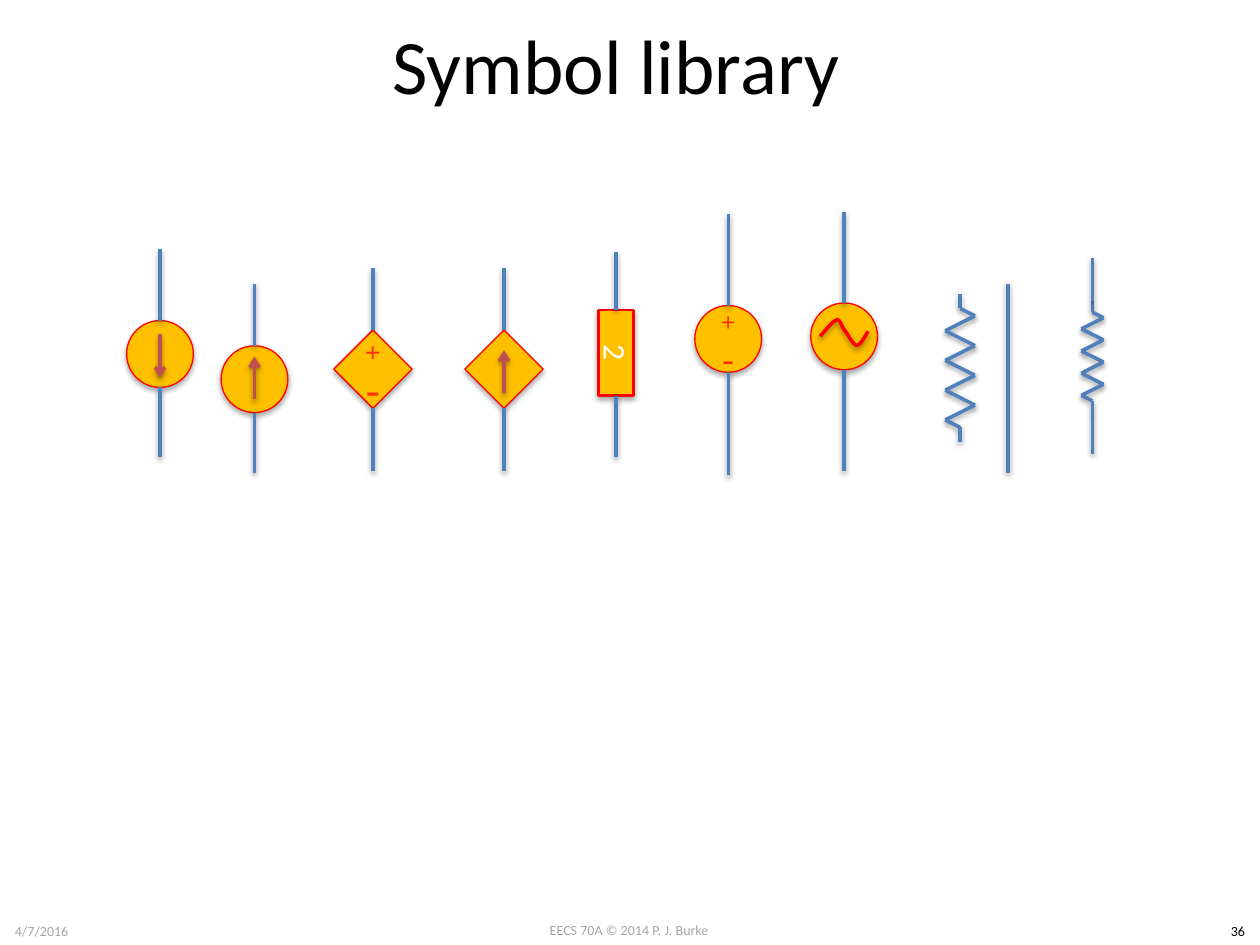
from dataclasses import dataclass
from itertools import pairwise
from math import sqrt

from lxml.etree import SubElement
from pptx import Presentation
from pptx.dml.color import RGBColor
from pptx.enum.shapes import MSO_CONNECTOR, MSO_SHAPE
from pptx.enum.text import MSO_ANCHOR, PP_ALIGN
from pptx.oxml.ns import qn
from pptx.util import Inches, Pt

COLUMNS, ROWS = 10, 7.5


@dataclass(frozen=True)
class Theme:
    font: str = "Calibri"
    sign_font: str = "Times New Roman"
    ink: str = "000000"
    muted: str = "A6A6A6"
    light: str = "FFFFFF"
    body: str = "FFC000"
    outline: str = "FF0000"
    wire: str = "4F81BD"
    arrow: str = "C0504D"
    sign: str = "FF3300"
    title_size: float = 44
    label_size: float = 18
    footer_size: float = 8
    wire_width: float = 2
    diameter: float = 0.53
    square: float = 0.44


class SymbolSheet:
    """Draws circuit symbols; lengths are grid columns and rows."""

    def __init__(self, presentation, theme):
        self.theme = theme
        self.column = presentation.slide_width / COLUMNS
        self.row = presentation.slide_height / ROWS
        self.slide = presentation.slides.add_slide(presentation.slide_layouts[5])
        self.canvas = self.slide.shapes

    def begin_symbol(self):
        self.canvas = self.slide.shapes.add_group_shape().shapes

    def end_symbol(self):
        self.canvas = self.slide.shapes

    def point(self, x, y):
        return round(x * self.column), round(y * self.row)

    def box(self, x, y, width, height):
        return *self.point(x, y), *self.point(width, height)

    def set_text(self, shape, text, size, color, align=PP_ALIGN.CENTER, font=None, bold=False):
        frame = shape.text_frame
        frame.vertical_anchor = MSO_ANCHOR.MIDDLE
        paragraph = frame.paragraphs[0]
        paragraph.text = text
        paragraph.alignment = align
        paragraph.font.name = font or self.theme.font
        paragraph.font.size = Pt(size)
        paragraph.font.bold = bold
        paragraph.font.color.rgb = RGBColor.from_string(color)

    def title(self, text, *area):
        shape = self.slide.shapes.title
        shape.left, shape.top, shape.width, shape.height = self.box(*area)
        self.set_text(shape, text, self.theme.title_size, self.theme.ink)

    def text(self, text, area, size, color, inset=0.0, **style):
        shape = self.canvas.add_textbox(*self.box(*area))
        frame = shape.text_frame
        frame.word_wrap = True
        frame.margin_left = frame.margin_right = self.point(inset, 0)[0]
        frame.margin_top = frame.margin_bottom = 0
        self.set_text(shape, text, size, color, **style)

    def stroke(self, shape, color, width, distance=20000, opacity=38000):
        """Set the line, then the soft shadow below it."""
        shape.line.color.rgb = RGBColor.from_string(color)
        shape.line.width = Pt(width)
        effects = SubElement(shape._element.spPr, qn("a:effectLst"))
        shadow = SubElement(effects, qn("a:outerShdw"), blurRad="40000",
                            dist=str(distance), dir="5400000", rotWithShape="0")
        black = SubElement(shadow, qn("a:srgbClr"), val="000000")
        SubElement(black, qn("a:alpha"), val=str(opacity))

    def line(self, start, end, color=None):
        connector = self.canvas.add_connector(
            MSO_CONNECTOR.STRAIGHT, *self.point(*start), *self.point(*end))
        self.stroke(connector, color or self.theme.wire, self.theme.wire_width)
        return connector

    def arrow(self, x, start, end):
        connector = self.line((x, start), (x, end), self.theme.arrow)
        SubElement(connector._element.spPr.find(qn("a:ln")), qn("a:tailEnd"), type="arrow")

    def body(self, kind, x, y, width, height, rotation=0, line_width=0.75):
        """Place a filled shape by its centre."""
        shape = self.canvas.add_shape(
            kind, *self.box(x - width / 2, y - height / 2, width, height))
        shape.rotation = rotation
        shape.fill.solid()
        shape.fill.fore_color.rgb = RGBColor.from_string(self.theme.body)
        self.stroke(shape, self.theme.outline, line_width, 23000, 35000)
        return shape

    def leads(self, x, y, half, top, bottom):
        self.line((x, y - half), (x, top))
        self.line((x, y + half), (x, bottom))

    def circle(self, x, y, top, bottom):
        size = self.theme.diameter
        self.begin_symbol()
        self.body(MSO_SHAPE.OVAL, x, y, size, size)
        self.leads(x, y, size / 2, top, bottom)

    def diamond(self, x, y, top, bottom):
        size = self.theme.square
        self.begin_symbol()
        self.body(MSO_SHAPE.RECTANGLE, x, y, size, size, rotation=45)
        self.leads(x, y, size / sqrt(2), top, bottom)

    def polarity(self, x, y, plus_size, minus_size):
        width, height = 0.26, 0.33
        for sign, offset, size in (("+", -0.14, plus_size), ("-", 0.15, minus_size)):
            area = (x - width / 2, y + offset - height / 2, width, height)
            self.text(sign, area, size, self.theme.sign,
                      font=self.theme.sign_font, bold=sign == "+")

    def box_symbol(self, label, x, y, length, thickness, top, bottom):
        self.begin_symbol()
        shape = self.body(MSO_SHAPE.RECTANGLE, x, y, length, thickness, 90, 1.5)
        self.set_text(shape, label, self.theme.label_size, self.theme.light)
        self.leads(x, y, length / 2, top, bottom)

    def wave(self, start, *curves, steps=12):
        """Trace cubic curves, each given as two controls and an end."""
        builder = self.canvas.build_freeform(*self.point(*start))
        points = []
        for first, second, end in curves:
            knots = (start, first, second, end)
            for step in range(1, steps + 1):
                t = step / steps
                weights = ((1 - t) ** 3, 3 * t * (1 - t) ** 2, 3 * t * t * (1 - t), t ** 3)
                points.append(self.point(*(
                    sum(weight * knot[axis] for weight, knot in zip(weights, knots))
                    for axis in (0, 1))))
            start = end
        builder.add_line_segments(points, close=False)
        shape = builder.convert_to_shape()
        shape.fill.background()
        self.stroke(shape, self.theme.outline, self.theme.wire_width)

    def resistor(self, x, top, height):
        """Ten steps high: a lead, half a tooth, seven teeth, half a tooth, a lead."""
        self.begin_symbol()
        step = height / 10
        teeth = [(1 if n % 2 == 0 else -1, n + 1.5) for n in range(8)]
        turns = [(0, 0), (0, 1), *teeth, (0, 9), (0, 10)]
        points = [(x + side * step, top + depth * step) for side, depth in turns]
        for start, end in pairwise(points):
            self.line(start, end)


def main():
    presentation = Presentation()
    presentation.slide_width, presentation.slide_height = Inches(COLUMNS), Inches(ROWS)
    theme = Theme()
    sheet = SymbolSheet(presentation, theme)
    sheet.title("Symbol library", 0.39, -0.12, 9, 1.25)

    # Current sources
    sheet.circle(1.27, 2.81, 1.98, 3.63)
    sheet.arrow(1.27, 2.65, 3)
    sheet.circle(2.02, 3.01, 2.25, 3.75)
    sheet.arrow(2.02, 3.17, 2.83)

    # Dependent sources
    sheet.diamond(2.96, 2.93, 2.13, 3.74)
    sheet.polarity(2.96, 2.93, 16, 24)
    sheet.diamond(4, 2.93, 2.13, 3.74)
    sheet.arrow(4, 3.12, 2.78)

    # Box element
    sheet.box_symbol("2", 4.89, 2.8, 0.68, 0.28, 2, 3.63)

    # Voltage sources
    sheet.circle(5.78, 2.69, 1.7, 3.77)
    sheet.polarity(5.78, 2.69, 14.8, 20)
    sheet.circle(6.7, 2.67, 1.68, 3.74)
    sheet.wave((6.51, 2.67),
               ((6.56, 2.61), (6.61, 2.55), (6.64, 2.54)),
               ((6.67, 2.53), (6.68, 2.6), (6.71, 2.63)),
               ((6.74, 2.67), (6.77, 2.74), (6.8, 2.74)),
               ((6.83, 2.74), (6.86, 2.68), (6.89, 2.63)))

    # Resistors and plain wire
    sheet.resistor(7.62, 2.33, 1.18)
    sheet.end_symbol()
    sheet.line((8, 3.75), (8, 2.25))
    sheet.resistor(8.67, 2.39, 0.88)
    sheet.leads(8.67, 2.83, 0.44, 2.05, 3.6)
    sheet.end_symbol()

    # Footer
    size = theme.footer_size
    sheet.text("4/7/2016", (0.02, 7.27, 2.07, 0.23), size, theme.muted,
               inset=0.1, align=PP_ALIGN.LEFT)
    sheet.text("EECS 70A © 2014 P. J. Burke", (3.83, 7.26, 2.33, 0.24), size, theme.muted)
    sheet.text("36", (9.65, 7.27, 0.35, 0.24), size, theme.ink)

    presentation.save("out.pptx")


if __name__ == "__main__":
    main()
